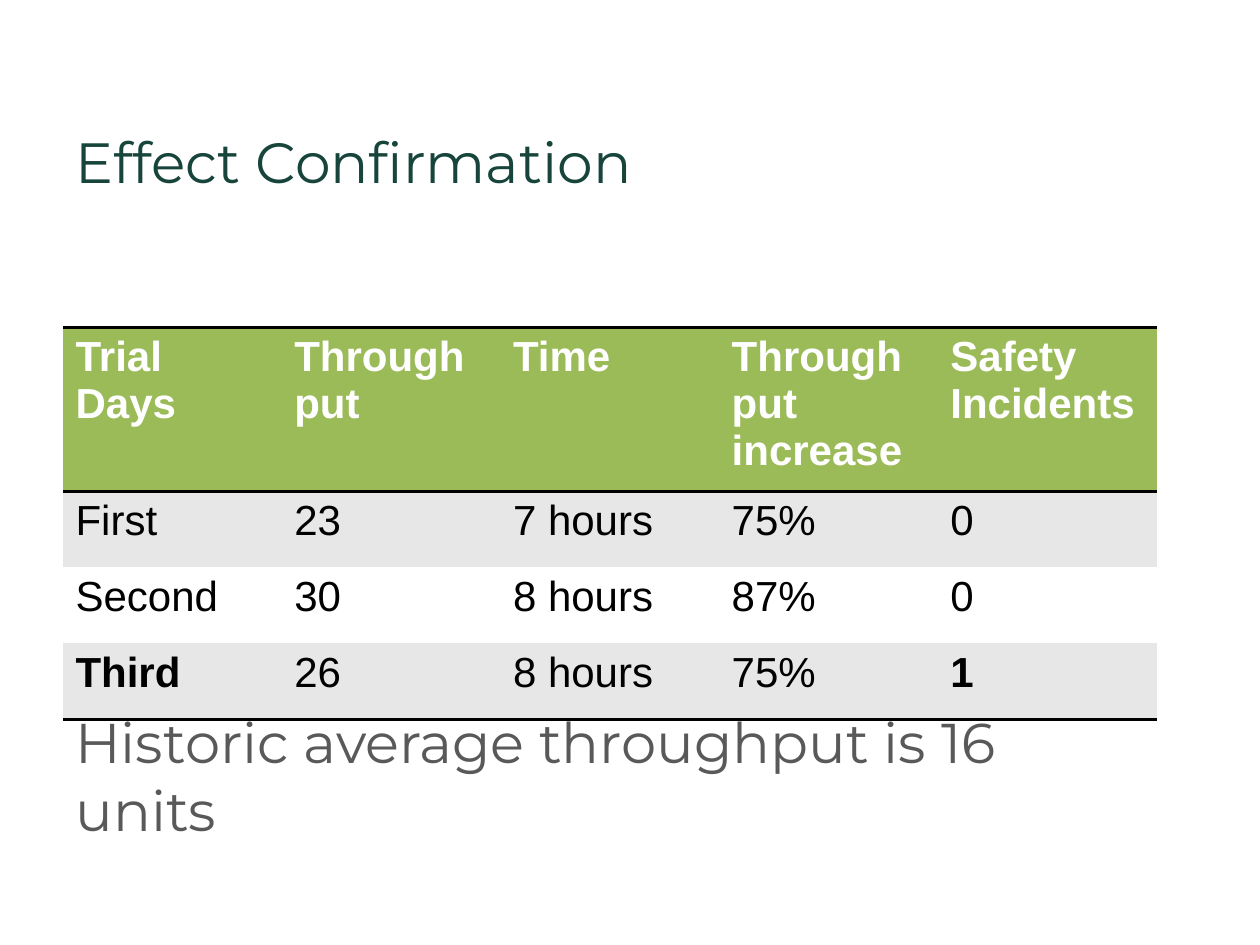
from lxml.etree import SubElement
from pptx import Presentation
from pptx.dml.color import RGBColor
from pptx.enum.text import MSO_AUTO_SIZE as AutoSize
from pptx.oxml.ns import qn
from pptx.util import Pt

COLORS = {
    "title": "18453B",
    "note": "595959",
    "header": "9BBB59",
    "band": "E7E7E7",
    "white": "FFFFFF",
    "black": "000000",
}


def style(paragraph, size, font, color, bold=False):
    for run in paragraph.runs:
        run.font.size = Pt(size)
        run.font.name = font
        run.font.bold = bold
        run.font.color.rgb = RGBColor.from_string(COLORS[color])


def set_borders(cell, ruled_sides):
    properties = cell._tc.get_or_add_tcPr()
    for position, side in enumerate(("lnL", "lnR", "lnT", "lnB")):
        line = properties.makeelement(qn(f"a:{side}"), {"w": str(Pt(2))})
        properties.insert(position, line)
        if side in ruled_sides:
            fill = SubElement(line, qn("a:solidFill"))
            SubElement(fill, qn("a:srgbClr"), val=COLORS["black"])
        else:
            SubElement(line, qn("a:noFill"))


presentation = Presentation()
presentation.slide_width, presentation.slide_height = Pt(720), Pt(540)
slide = presentation.slides.add_slide(presentation.slide_layouts[6])

title = slide.shapes.add_textbox(Pt(36), Pt(69), Pt(648), Pt(38)).text_frame
title.word_wrap = True
title.text = "Effect Confirmation"
style(title.paragraphs[0], 32.4, "Montserrat", "title")

trial_rows = [
    ("Trial Days", "Throughput", "Time", "Throughput increase", "Safety Incidents"),
    ("First", "23", "7 hours", "75%", "0"),
    ("Second", "30", "8 hours", "87%", "0"),
    ("Third", "26", "8 hours", "75%", "1"),
]
bold_values = {"Third", "1"}
row_fills = ["header", "band", "white", "band"]
row_rules = [("lnT", "lnB"), ("lnT",), (), ("lnB",)]

trials = slide.shapes.add_table(4, 5, Pt(36), Pt(187), Pt(625), Pt(174)).table
for column in trials.columns:
    column.width = Pt(125)
for row_index, values in enumerate(trial_rows):
    is_header = row_index == 0
    trials.rows[row_index].height = Pt(43.5)
    for column_index, value in enumerate(values):
        cell = trials.cell(row_index, column_index)
        cell.text = value
        cell.fill.solid()
        cell.fill.fore_color.rgb = RGBColor.from_string(COLORS[row_fills[row_index]])
        style(cell.text_frame.paragraphs[0], 24, "Arial",
              "white" if is_header else "black", is_header or value in bold_values)
        set_borders(cell, row_rules[row_index])

note = slide.shapes.add_textbox(Pt(36), Pt(401), Pt(563), Pt(46)).text_frame
note.word_wrap = True
note.auto_size = AutoSize.SHAPE_TO_FIT_TEXT
note.text = "Historic average throughput is 16 units"
style(note.paragraphs[0], 32, "Montserrat", "note")

presentation.save("out.pptx")
